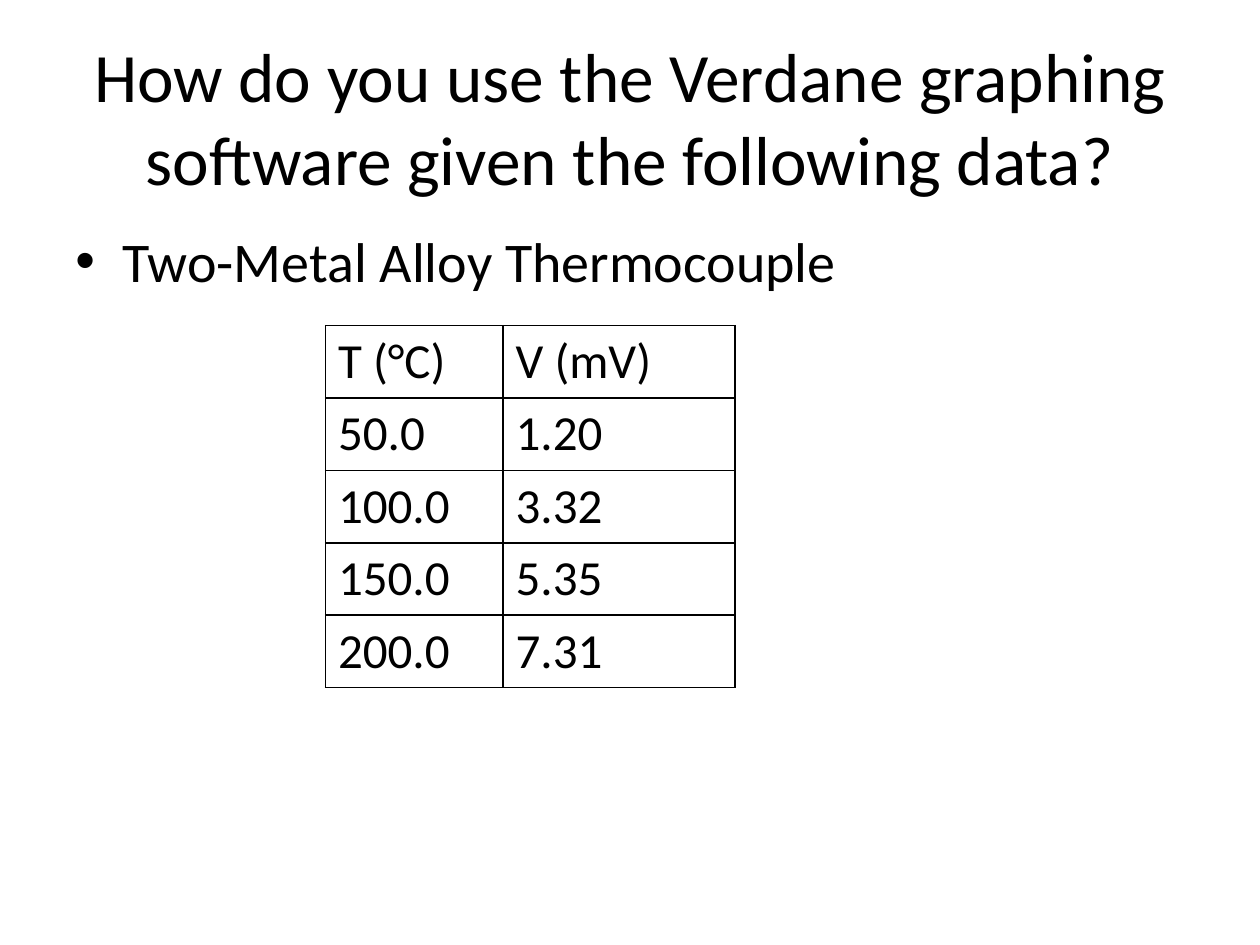
from dataclasses import dataclass

from lxml.etree import SubElement
from pptx import Presentation
from pptx.dml.color import RGBColor
from pptx.enum.text import MSO_ANCHOR, MSO_AUTO_SIZE, PP_ALIGN
from pptx.oxml.ns import qn
from pptx.util import Pt


@dataclass(frozen=True)
class Theme:
    font: str = "Calibri"
    ink: str = "000000"
    title_size: float = 39.6
    body_size: float = 32
    table_size: float = 28
    border_width: float = 1


@dataclass(frozen=True)
class Box:
    left: float
    top: float
    width: float
    height: float

    def lengths(self):
        return Pt(self.left), Pt(self.top), Pt(self.width), Pt(self.height)


THEME = Theme()
READINGS = [
    ("T (°C)", "V (mV)"),
    ("50.0", "1.20"),
    ("100.0", "3.32"),
    ("150.0", "5.35"),
    ("200.0", "7.31"),
]


def add_span(para, text, size):
    span = para.add_run()
    span.text = text
    span.font.name = THEME.font
    span.font.size = Pt(size)
    span.font.color.rgb = RGBColor.from_string(THEME.ink)


def place_title(page, box, text):
    title = page.shapes.title
    title.left, title.top, title.width, title.height = box.lengths()
    frame = title.text_frame
    frame.auto_size = MSO_AUTO_SIZE.NONE
    frame.vertical_anchor = MSO_ANCHOR.MIDDLE
    para = frame.paragraphs[0]
    para.alignment = PP_ALIGN.CENTER
    add_span(para, text, THEME.title_size)


def add_bullet(page, box, text, indent=27):
    frame = page.shapes.add_textbox(*box.lengths()).text_frame
    frame.word_wrap = True
    para = frame.paragraphs[0]
    add_span(para, text, THEME.body_size)
    # Hanging bullet
    props = para._p.get_or_add_pPr()
    props.set("marL", str(Pt(indent)))
    props.set("indent", str(-Pt(indent)))
    SubElement(props, qn("a:buFont"), typeface="Arial")
    SubElement(props, qn("a:buChar"), char="•")


def draw_borders(cell):
    props = cell._tc.get_or_add_tcPr()
    for position, side in enumerate(("lnL", "lnR", "lnT", "lnB")):
        line = SubElement(props, qn(f"a:{side}"), w=str(Pt(THEME.border_width)))
        fill = SubElement(line, qn("a:solidFill"))
        SubElement(fill, qn("a:srgbClr"), val=THEME.ink)
        props.insert(position, line)  # borders come before the cell fill


def add_readings_table(page, box, rows, column_widths):
    table = page.shapes.add_table(
        len(rows), len(column_widths), *box.lengths()).table
    table.first_row = table.horz_banding = False
    for column, width in zip(table.columns, column_widths):
        column.width = Pt(width)
    for row, values in zip(table.rows, rows):
        row.height = Pt(box.height / len(rows))
        for cell, value in zip(row.cells, values):
            cell.fill.background()
            draw_borders(cell)
            add_span(cell.text_frame.paragraphs[0], value, THEME.table_size)


def main():
    deck = Presentation()
    deck.slide_width, deck.slide_height = Pt(720), Pt(540)
    page = deck.slides.add_slide(deck.slide_layouts[5])  # title only

    place_title(page, Box(36, 21.6, 648, 90),
                "How do you use the Verdane graphing software "
                "given the following data?")
    add_bullet(page, Box(36, 126, 648, 356.4), "Two-Metal Alloy Thermocouple")
    add_readings_table(page, Box(186, 186, 234, 207), READINGS, (101.5, 132.5))

    deck.save("out.pptx")


if __name__ == "__main__":
    main()
